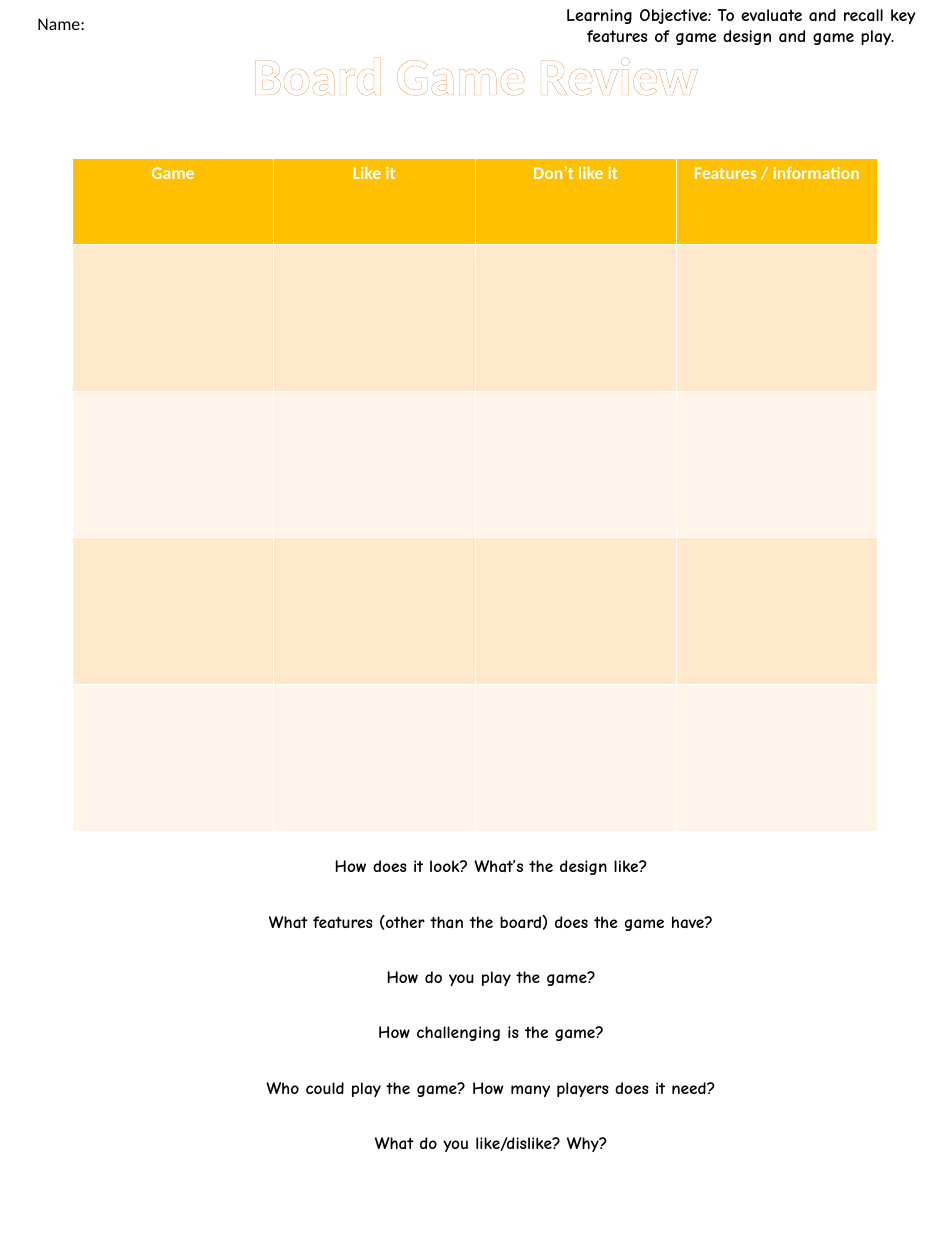
from lxml import etree
from pptx import Presentation
from pptx.dml.color import RGBColor
from pptx.enum.text import MSO_ANCHOR, MSO_AUTO_SIZE, PP_ALIGN
from pptx.oxml.ns import qn
from pptx.util import Inches, Pt

CENTER, LEFT = PP_ALIGN.CENTER, PP_ALIGN.LEFT
TOP = MSO_ANCHOR.TOP
NO_AUTOFIT = MSO_AUTO_SIZE.NONE


def color(hex_value):
    return RGBColor.from_string(hex_value)


def write(shape, *texts, font="Calibri", size=18, fill="000000", bold=False,
          align=CENTER, wrap=True, line_spacing=1.0, gap=0):
    """Fill a shape or cell with one paragraph per text."""
    frame = shape.text_frame
    frame.word_wrap = wrap
    frame.auto_size = NO_AUTOFIT
    frame.vertical_anchor = TOP
    for index, text in enumerate(texts):
        paragraph = frame.paragraphs[0] if index == 0 else frame.add_paragraph()
        paragraph.alignment = align
        paragraph.line_spacing = line_spacing
        paragraph.space_before = Pt(gap if index else 0)
        run = paragraph.add_run()
        run.text = text
        run.font.name = font
        run.font.size = Pt(size)
        run.font.bold = bold
        run.font.color.rgb = color(fill)


presentation = Presentation()
presentation.slide_width = Inches(13.33)
presentation.slide_height = Inches(17.78)
slide = presentation.slides.add_slide(presentation.slide_layouts[0])

# Title with outlined letters
title = slide.shapes.title
title.left, title.top = Inches(3.43), Inches(0.54)
title.width, title.height = Inches(6.55), Inches(1.01)
write(title, "Board Game Review", size=54, fill="FFFFFF", bold=True, wrap=False)
title_font = title.text_frame.paragraphs[0].runs[0].font
outline = etree.Element(qn("a:ln"), w=str(Pt(0.52)))
outline_fill = etree.SubElement(outline, qn("a:solidFill"))
etree.SubElement(outline_fill, qn("a:srgbClr"), val="ED7D31")
title_font._element.insert(0, outline)

# Name and learning objective
name_box = slide.shapes.add_textbox(Inches(0.43), Inches(0.13), Inches(0.94), Inches(0.4))
write(name_box, "Name:", align=LEFT, wrap=False)
objective_box = slide.shapes.add_textbox(Inches(7.53), 0, Inches(5.84), Inches(0.71))
write(objective_box,
      "Learning Objective: To evaluate and recall key features of game design and game play.",
      font="Comic Neue", bold=True)

# Review table
headers = ["Game", "Like it", "Don’t like it", "Features / information"]
row_fills = ["FFC000", "FFE8CC", "FFF4E7", "FFE8CC", "FFF4E7"]
table = slide.shapes.add_table(len(row_fills), len(headers), Inches(1.02), Inches(2.24),
                               Inches(11.36), Inches(9.49)).table
for column in table.columns:
    column.width = Inches(2.84)
for index, (row, row_fill) in enumerate(zip(table.rows, row_fills)):
    row.height = Inches(2.07 if index else 1.21)
    for cell in row.cells:
        cell.fill.solid()
        cell.fill.fore_color.rgb = color(row_fill)
for cell, header in zip(table.rows[0].cells, headers):
    write(cell, header, fill="FFFFFF", bold=True)

# Guiding questions
questions = slide.placeholders[1]
questions.left, questions.top = Inches(1.93), Inches(12.1)
questions.width, questions.height = Inches(10), Inches(4.29)
write(questions,
      "How does it look? What’s the design like?",
      "What features (other than the board) does the game have?",
      "How do you play the game?",
      "How challenging is the game?",
      "Who could play the game? How many players does it need?",
      "What do you like/dislike? Why?",
      font="Comic Neue", size=17.6, bold=True, line_spacing=0.7, gap=41.5)

presentation.save("out.pptx")
